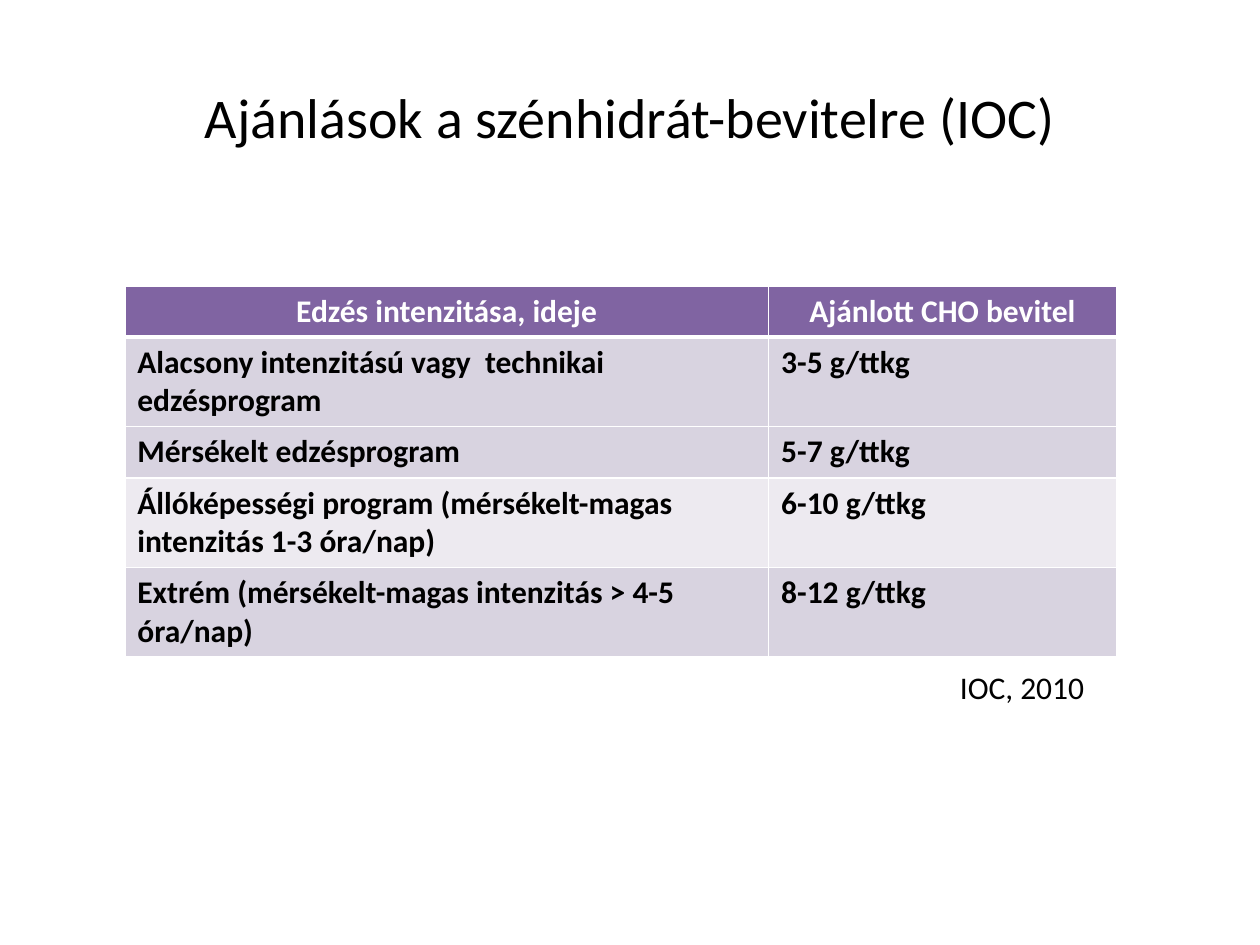
from dataclasses import dataclass

from lxml import etree
from pptx import Presentation
from pptx.dml.color import RGBColor
from pptx.enum.text import MSO_ANCHOR, MSO_AUTO_SIZE, PP_ALIGN
from pptx.oxml.ns import qn
from pptx.util import Inches, Length, Pt

CENTER, LEFT = PP_ALIGN.CENTER, PP_ALIGN.LEFT
MIDDLE = MSO_ANCHOR.MIDDLE
FIT_SHAPE = MSO_AUTO_SIZE.SHAPE_TO_FIT_TEXT

BLACK = RGBColor(0x00, 0x00, 0x00)
WHITE = RGBColor(0xFF, 0xFF, 0xFF)
PURPLE = RGBColor(0x80, 0x64, 0xA2)
LILAC = RGBColor(0xD8, 0xD3, 0xE0)
PALE_LILAC = RGBColor(0xED, 0xEA, 0xF0)

FONT = "Calibri"
TITLE_SIZE, TEXT_SIZE = Pt(32), Pt(18)
THIN, THICK = Pt(1), Pt(3)
COLUMN_WIDTHS = (Inches(5.11), Inches(2.76))


@dataclass(frozen=True)
class TableRow:
    training: str
    intake: str
    height: Length
    fill: RGBColor


ROWS = [
    TableRow("Edzés intenzitása, ideje", "Ajánlott CHO bevitel", Inches(0.4), PURPLE),
    TableRow("Alacsony intenzitású vagy  technikai edzésprogram", "3-5 g/ttkg", Inches(0.71), LILAC),
    TableRow("Mérsékelt edzésprogram", "5-7 g/ttkg", Inches(0.4), LILAC),
    TableRow("Állóképességi program (mérsékelt-magas intenzitás 1-3 óra/nap)", "6-10 g/ttkg",
             Inches(0.71), PALE_LILAC),
    TableRow("Extrém (mérsékelt-magas intenzitás > 4-5 óra/nap)", "8-12 g/ttkg", Inches(0.71), LILAC),
]


def write_text(text_frame, text: str, size: Length, color: RGBColor,
               alignment: PP_ALIGN = LEFT, bold: bool = False) -> None:
    text_frame.text = text
    paragraph = text_frame.paragraphs[0]
    paragraph.alignment = alignment
    font = paragraph.runs[0].font
    font.name, font.size, font.bold = FONT, size, bold
    font.color.rgb = color


def set_borders(cell, top: Length, bottom: Length) -> None:
    """Put white lines on all four sides; they must precede the cell's fill."""
    properties = cell._tc.get_or_add_tcPr()
    sides = {"a:lnL": THIN, "a:lnR": THIN, "a:lnT": top, "a:lnB": bottom}
    for tag, width in sides.items():
        line = etree.SubElement(properties, qn(tag), w=str(int(width)))
        fill = etree.SubElement(line, qn("a:solidFill"))
        etree.SubElement(fill, qn("a:srgbClr"), val=str(WHITE))


def add_intake_table(slide, rows: list[TableRow]) -> None:
    frame = slide.shapes.add_table(
        len(rows), len(COLUMN_WIDTHS), Inches(0.99), Inches(2.27),
        sum(COLUMN_WIDTHS), sum(row.height for row in rows))
    table = frame.table
    for column, width in zip(table.columns, COLUMN_WIDTHS):
        column.width = width
    for index, row in enumerate(rows):
        table.rows[index].height = row.height
        is_header = index == 0
        for column, text in enumerate((row.training, row.intake)):
            cell = table.cell(index, column)
            write_text(cell.text_frame, text, TEXT_SIZE, WHITE if is_header else BLACK,
                       CENTER if is_header else LEFT, bold=True)
            set_borders(cell, top=THICK if index == 1 else THIN,
                        bottom=THICK if is_header else THIN)
            cell.fill.solid()
            cell.fill.fore_color.rgb = row.fill


def main() -> None:
    presentation = Presentation()
    presentation.slide_width, presentation.slide_height = Inches(10), Inches(7.5)
    slide = presentation.slides.add_slide(presentation.slide_layouts[5])

    # Title
    title = slide.shapes.title
    title.left, title.top = Inches(0.5), Inches(0.3)
    title.width, title.height = Inches(9), Inches(1.25)
    title.text_frame.vertical_anchor = MIDDLE
    write_text(title.text_frame, "Ajánlások a szénhidrát-bevitelre (IOC)", TITLE_SIZE, BLACK, CENTER)

    # Recommended intake by training load
    add_intake_table(slide, ROWS)

    # Source of the recommendations
    source = slide.shapes.add_textbox(Inches(7.52), Inches(5.25), Inches(1.19), Inches(0.4))
    source.text_frame.word_wrap = False
    source.text_frame.auto_size = FIT_SHAPE
    write_text(source.text_frame, "IOC, 2010", TEXT_SIZE, BLACK)

    presentation.save("out.pptx")


if __name__ == "__main__":
    main()
